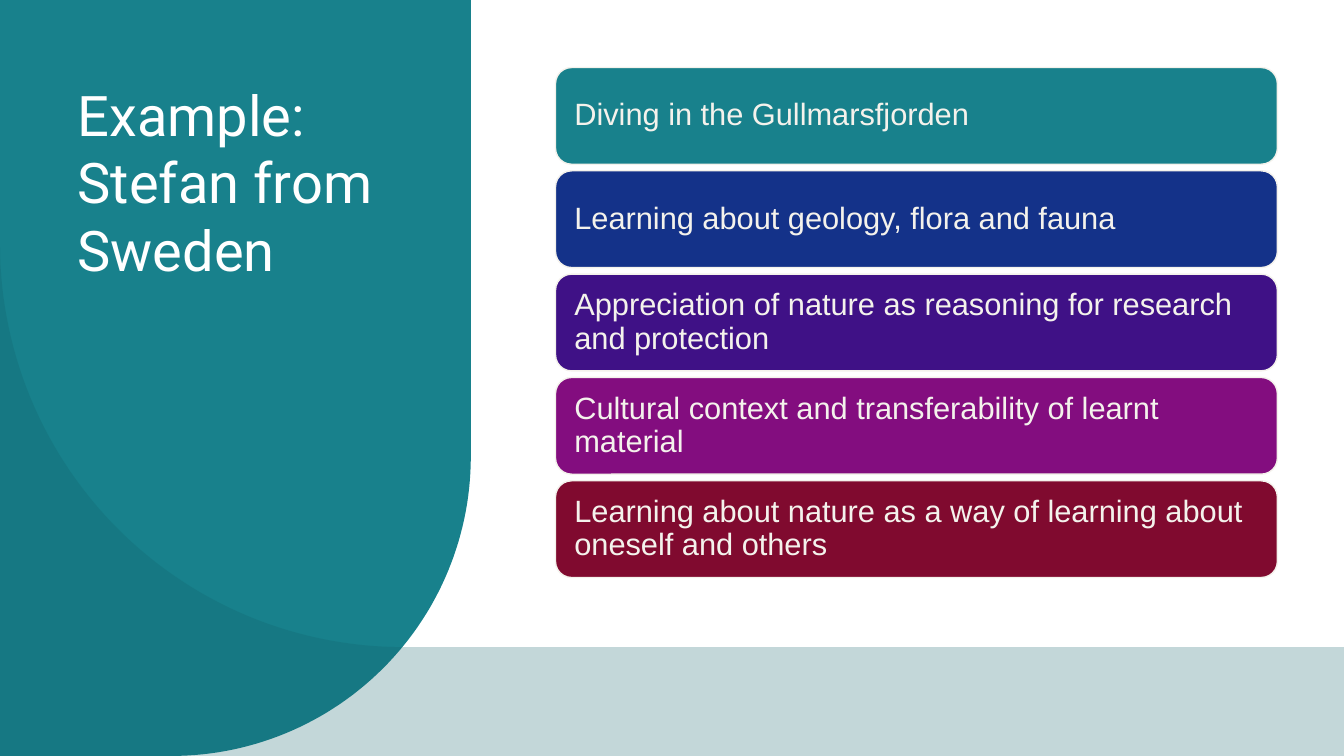
import math
from dataclasses import dataclass

import pptx
import pptx.dml.color
import pptx.enum.shapes
import pptx.enum.text
import pptx.oxml.ns
import pptx.util
from lxml import etree
from pptx.util import Inches

Point = tuple[float, float]


@dataclass(frozen=True)
class Theme:
    teal: str = "18818C"
    shade: str = "126169"
    cream: str = "F4F2EC"
    white: str = "FFFFFF"
    title_font: str = "Roboto"
    card_font: str = "Arial"
    title_size: int = 40
    title_leading: int = 48
    card_size: int = 22


@dataclass(frozen=True)
class Card:
    text: str
    color: str


THEME = Theme()
WIDTH, HEIGHT = 13.33, 7.5
CARD_LEFT, CARD_TOP, CARD_WIDTH, CARD_HEIGHT = 5.51, 0.67, 7.16, 0.96
CARD_PITCH = 1.025
CARDS = [
    Card("Diving in the Gullmarsfjorden", THEME.teal),
    Card("Learning about geology, flora and fauna", "143289"),
    Card("Appreciation of nature as reasoning for research and protection", "3F1186"),
    Card("Cultural context and transferability of learnt material", "830D7F"),
    Card("Learning about nature as a way of learning about oneself and others", "800A2F"),
]


def rgb(color: str) -> pptx.dml.color.RGBColor:
    return pptx.dml.color.RGBColor.from_string(color)


def set_format(target, values: dict) -> None:
    for name, value in values.items():
        setattr(target, name, value)


def set_font(r, font: str, size: int, color: str) -> None:
    set_format(r.font, {"name": font, "size": pptx.util.Pt(size), "bold": False})
    r.font.color.rgb = rgb(color)


def quarter_arc(center: Point, radius: float, start: int) -> list[Point]:
    """Points of a quarter circle that ends at its lowest point."""
    steps = 60
    angles = [math.radians(start + (90 - start) * i / steps) for i in range(steps + 1)]
    return [(center[0] + radius * math.cos(a), center[1] + radius * math.sin(a))
            for a in angles]


def draw_outline(s, points: list[Point], color: str, alpha: int = 100) -> None:
    corners = [(Inches(x), Inches(y)) for x, y in points]
    builder = s.shapes.build_freeform(*corners[0])
    builder.add_line_segments(corners[1:], close=True)
    sp = builder.convert_to_shape()
    sp.shadow.inherit = False
    sp.fill.solid()
    sp.fill.fore_color.rgb = rgb(color)
    sp.line.fill.background()
    if alpha < 100:
        tag = pptx.oxml.ns.qn("a:srgbClr")
        clr = next(sp.fill._xPr.iter(tag))
        etree.SubElement(clr, pptx.oxml.ns.qn("a:alpha"), val=str(alpha * 1000))


def draw_card(s, card: Card, top: float) -> None:
    sp = s.shapes.add_shape(
        pptx.enum.shapes.MSO_SHAPE.ROUNDED_RECTANGLE,
        Inches(CARD_LEFT), Inches(top), Inches(CARD_WIDTH), Inches(CARD_HEIGHT))
    sp.shadow.inherit = False
    sp.fill.solid()
    sp.fill.fore_color.rgb = rgb(card.color)
    sp.line.color.rgb = rgb(THEME.cream)
    sp.line.width = pptx.util.Pt(1)
    tf = sp.text_frame
    set_format(tf, {
        "word_wrap": True,
        "vertical_anchor": pptx.enum.text.MSO_ANCHOR.MIDDLE,
        "margin_left": Inches(0.14), "margin_right": Inches(0.14),
        "margin_top": Inches(0.14), "margin_bottom": Inches(0.14),
    })
    p = tf.paragraphs[0]
    set_format(p, {"alignment": pptx.enum.text.PP_ALIGN.LEFT, "line_spacing": 0.9})
    r = p.add_run()
    r.text = card.text
    set_font(r, THEME.card_font, THEME.card_size, THEME.cream)


def draw_title(s, text: str) -> None:
    title = s.shapes.title
    set_format(title, {"left": Inches(0.67), "top": Inches(0.75),
                       "width": Inches(3.67), "height": Inches(4.25)})
    tf = title.text_frame
    set_format(tf, {"word_wrap": True,
                    "auto_size": pptx.enum.text.MSO_AUTO_SIZE.NONE,
                    "vertical_anchor": pptx.enum.text.MSO_ANCHOR.TOP})
    p = tf.paragraphs[0]
    set_format(p, {"alignment": pptx.enum.text.PP_ALIGN.LEFT,
                   "line_spacing": pptx.util.Pt(THEME.title_leading)})
    r = p.add_run()
    r.text = text
    set_font(r, THEME.title_font, THEME.title_size, THEME.white)
    # Bring the title in front of the panel
    s.shapes._spTree.append(title._element)


def main() -> None:
    prs = pptx.Presentation()
    set_format(prs, {"slide_width": Inches(WIDTH), "slide_height": Inches(HEIGHT)})
    s = prs.slides.add_slide(prs.slide_layouts[5])
    s.background.fill.solid()
    s.background.fill.fore_color.rgb = rgb(THEME.white)

    # Rounded side panel and the translucent band along the bottom
    panel_arc = quarter_arc((1.7, 4.53), 2.97, 0)
    draw_outline(s, [(0, 0), (4.67, 0), *panel_arc, (0, HEIGHT)], THEME.teal)
    band_arc = quarter_arc((4, 2.42), 4, 180)
    draw_outline(s, [*band_arc, (WIDTH, 6.42), (WIDTH, HEIGHT), (0, HEIGHT)],
                 THEME.shade, alpha=25)

    # Title and the stack of cards
    draw_title(s, "Example: Stefan from Sweden")
    for i, card in enumerate(CARDS):
        draw_card(s, card, CARD_TOP + i * CARD_PITCH)

    prs.save("out.pptx")


if __name__ == "__main__":
    main()
